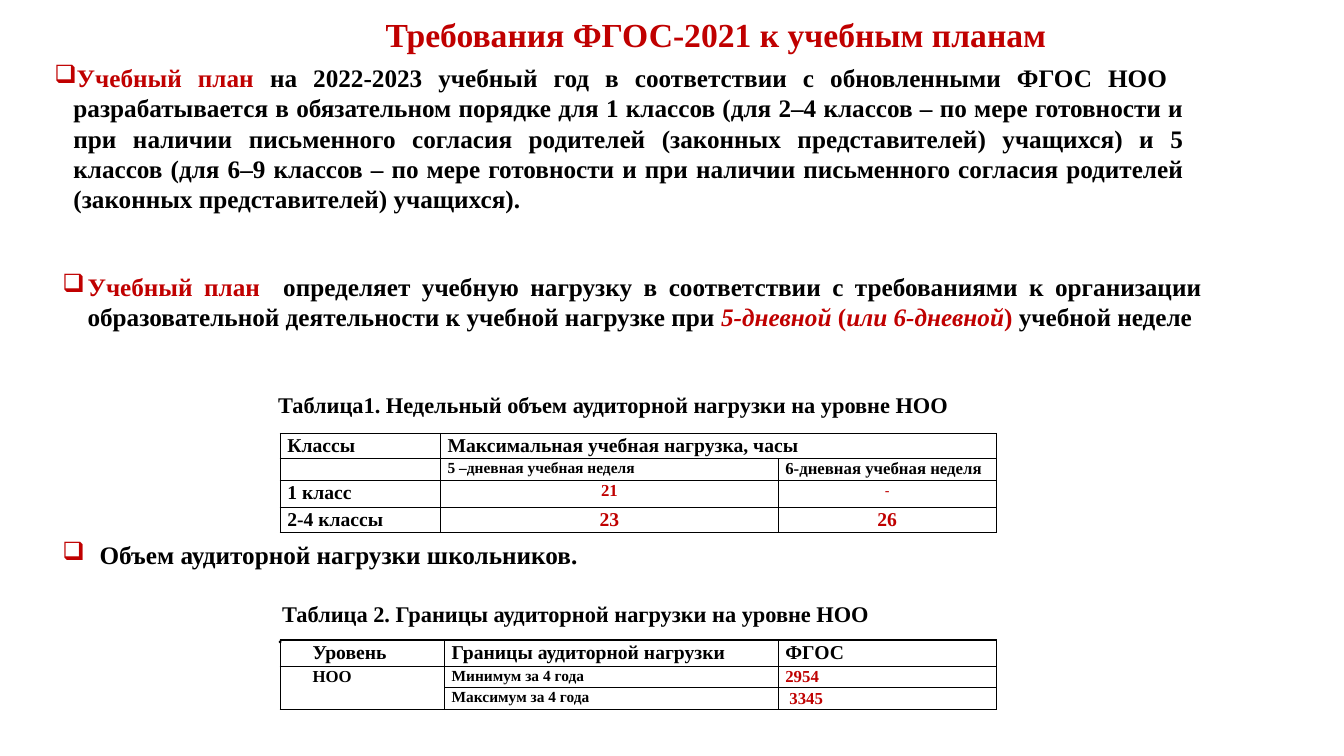
from lxml.etree import SubElement
from pptx import Presentation
from pptx.dml.color import RGBColor
from pptx.enum.text import MSO_ANCHOR, PP_ALIGN
from pptx.oxml.ns import qn
from pptx.util import Inches, Pt

RED = RGBColor(0xC0, 0x00, 0x00)
BLACK = RGBColor(0x00, 0x00, 0x00)
SERIF = "Times New Roman"

TITLE = "Требования ФГОС-2021 к учебным планам"
BULLETS = [
    ((0.44, 0.57, 11.4, 1.62), 0.19, 0.19, PP_ALIGN.JUSTIFY, [
        ("Учебный план ", RED, False),
        ("на 2022-2023 учебный год в соответствии с обновленными ФГОС НОО  "
         "разрабатывается в обязательном порядке для 1 классов (для 2–4 классов – "
         "по мере готовности и при наличии письменного согласия родителей "
         "(законных представителей) учащихся) и 5 классов (для 6–9 классов – "
         "по мере готовности и при наличии письменного согласия родителей "
         "(законных представителей) учащихся).", BLACK, False)]),
    ((0.52, 2.64, 11.5, 0.76), 0.25, 0.25, PP_ALIGN.JUSTIFY, [
        ("Учебный план ", RED, False),
        (" определяет учебную нагрузку в соответствии с требованиями к организации "
         "образовательной деятельности к учебной нагрузке при ", BLACK, False),
        ("5-дневной", RED, True), (" (", RED, False),
        ("или 6-дневной", RED, True), (") ", RED, False),
        ("учебной неделе", BLACK, False)]),
    ((0.52, 5.3, 11.25, 0.4), 0.37, 0.37, PP_ALIGN.LEFT, [
        ("Объем аудиторной нагрузки школьников.", BLACK, False)]),
]
CAPTIONS = [
    ((2.66, 3.83, 7.57, 0.36), 0, ["Таблица1. Недельный объем аудиторной нагрузки на уровне НОО"]),
    ((2.66, 5.9, 6.25, 0.6), 0.04,
     ["Таблица 2. Границы аудиторной нагрузки на\u00a0уровне НОО", "."]),
]
LOAD_TABLE = {
    "top": 4.3, "columns": [1.59, 3.35, 2.16], "rows": [0.23, 0.21, 0.27, 0.23],
    "merge": ((0, 1), (0, 2)),
    "cells": [
        [("Классы", 14, BLACK), ("Максимальная учебная нагрузка, часы", 14, BLACK), None],
        [("", 11, BLACK), ("5 –дневная учебная неделя", 11, BLACK),
         ("6-дневная учебная неделя", 12, BLACK)],
        [("1 класс", 14, BLACK), ("21", 12, RED), ("-", 11, RED)],
        [("2-4 классы", 14, BLACK), ("23", 14, RED), ("26", 14, RED)],
    ],
    "centred": True, "indents": {},
}
LIMITS_TABLE = {
    "top": 6.35, "columns": [1.63, 3.31, 2.16], "rows": [0.26, 0.2, 0.2],
    "merge": ((1, 0), (2, 0)),
    "cells": [
        [("Уровень", 14, BLACK), ("Границы аудиторной нагрузки", 14, BLACK), ("ФГОС", 14, BLACK)],
        [("НОО", 12, BLACK), ("Минимум за 4 года", 11, BLACK), ("2954", 12, RED)],
        [None, ("Максимум за 4 года", 11, BLACK), ("3345", 12, RED)],
    ],
    "centred": False, "indents": {(0, 0): 0.25, (1, 0): 0.25, (2, 2): 0.04},
}
TABLE_LEFT = 2.78


def style(font, size, color=None, bold=True, name=SERIF):
    font.name, font.size, font.bold = name, Pt(size), bold
    if color is not None:
        font.color.rgb = color


def set_indent(paragraph, margin, hanging=0):
    properties = paragraph._p.get_or_add_pPr()
    properties.set("marL", str(Inches(margin)))
    properties.set("indent", str(-Inches(hanging)))
    return properties


def add_text_frame(slide, box):
    frame = slide.shapes.add_textbox(*map(Inches, box)).text_frame
    frame.word_wrap = True
    return frame


def add_bullet(slide, box, margin, hanging, alignment, runs):
    paragraph = add_text_frame(slide, box).paragraphs[0]
    paragraph.alignment = alignment
    properties = set_indent(paragraph, margin, hanging)
    bullet_color = SubElement(properties, qn("a:buClr"))
    SubElement(bullet_color, qn("a:srgbClr")).set("val", str(RED))
    SubElement(properties, qn("a:buChar")).set("char", "❑")
    style(paragraph.font, 18)
    for text, color, italic in runs:
        run = paragraph.add_run()
        run.text = text
        run.font.color.rgb = color
        run.font.italic = italic


def add_caption(slide, box, margin, lines):
    frame = add_text_frame(slide, box)
    frame.text = "\n".join(lines)
    for paragraph, size in zip(frame.paragraphs, (16, 12)):
        style(paragraph.font, size, BLACK)
    set_indent(frame.paragraphs[0], margin)


def add_borders(cell):
    properties = cell._tc.get_or_add_tcPr()
    for position, side in enumerate(("a:lnL", "a:lnR", "a:lnT", "a:lnB")):
        line = SubElement(properties, qn(side))
        line.set("w", str(Pt(1)))
        fill = SubElement(line, qn("a:solidFill"))
        SubElement(fill, qn("a:srgbClr")).set("val", str(BLACK))
        properties.insert(position, line)


def add_grid(slide, data):
    columns, rows = data["columns"], data["rows"]
    table = slide.shapes.add_table(
        len(rows), len(columns), Inches(TABLE_LEFT), Inches(data["top"]),
        Inches(sum(columns)), Inches(sum(rows))).table
    table.first_row = table.horz_banding = False
    for column, width in zip(table.columns, columns):
        column.width = Inches(width)
    for row, height in zip(table.rows, rows):
        row.height = Inches(height)
    first, last = data["merge"]
    table.cell(*first).merge(table.cell(*last))
    for row_index, row in enumerate(data["cells"]):
        for column_index, content in enumerate(row):
            cell = table.cell(row_index, column_index)
            cell.margin_left = cell.margin_right = Inches(0.07)
            cell.margin_top = cell.margin_bottom = 0
            cell.fill.background()
            add_borders(cell)
            text, size, color = content or ("", 11, BLACK)
            paragraph = cell.text_frame.paragraphs[0]
            paragraph.text = text
            paragraph.line_spacing = 1.07
            if data["centred"] and color == RED:
                paragraph.alignment = PP_ALIGN.CENTER
            if (row_index, column_index) in data["indents"]:
                set_indent(paragraph, data["indents"][row_index, column_index])
            is_dash = text == "-"
            style(paragraph.font, size, color, not is_dash, "Calibri" if is_dash else SERIF)


def main():
    presentation = Presentation()
    presentation.slide_width, presentation.slide_height = Inches(13.33), Inches(7.5)
    slide = presentation.slides.add_slide(presentation.slide_layouts[6])

    title_frame = add_text_frame(slide, (1.35, -0.13, 11.5, 0.98))
    title_frame.vertical_anchor = MSO_ANCHOR.MIDDLE
    title = title_frame.paragraphs[0]
    title.text = TITLE
    title.alignment = PP_ALIGN.CENTER
    title.line_spacing = 0.9
    style(title.font, 24, RED)

    for bullet in BULLETS:
        add_bullet(slide, *bullet)
    for caption in CAPTIONS:
        add_caption(slide, *caption)
    for data in (LOAD_TABLE, LIMITS_TABLE):
        add_grid(slide, data)
    presentation.save("out.pptx")


if __name__ == "__main__":
    main()
